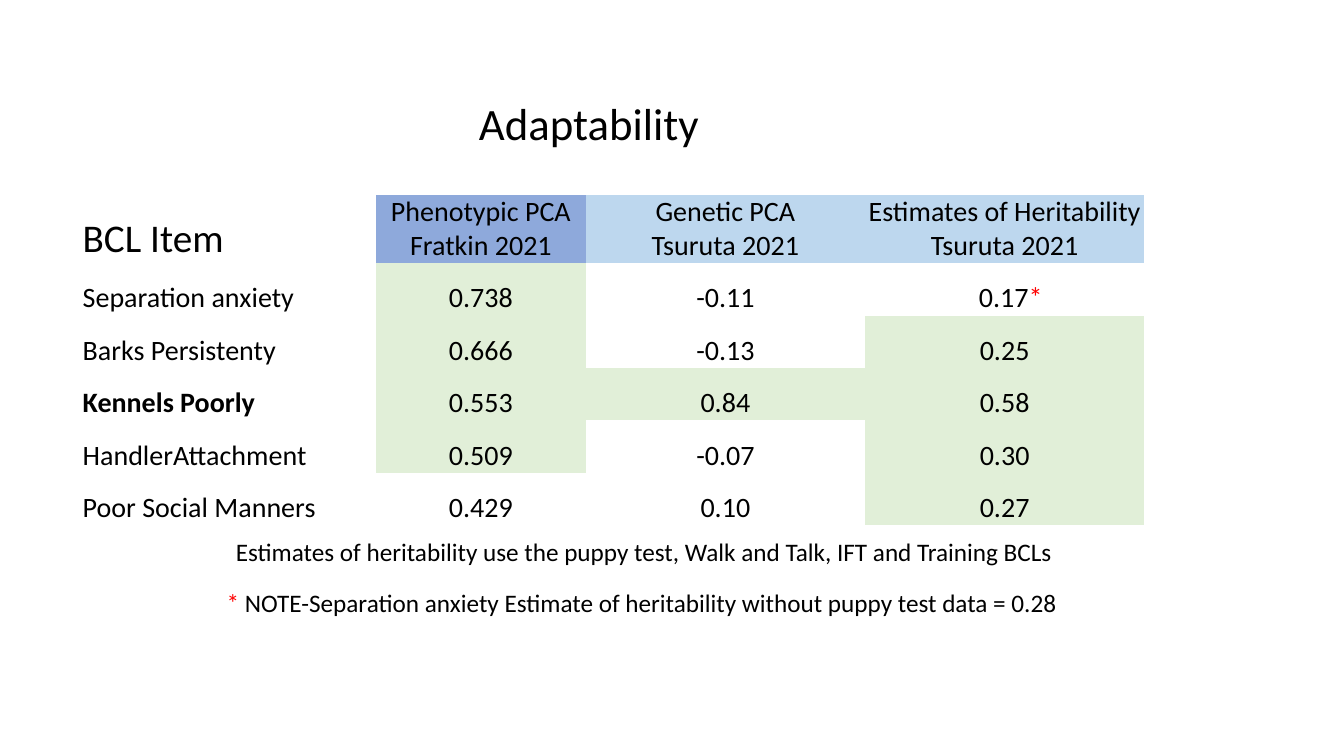
from dataclasses import dataclass

from pptx import Presentation
from pptx.dml.color import RGBColor
from pptx.enum.text import MSO_ANCHOR, PP_ALIGN
from pptx.util import Pt

LEFT, CENTER = PP_ALIGN.LEFT, PP_ALIGN.CENTER
TOP, BOTTOM = MSO_ANCHOR.TOP, MSO_ANCHOR.BOTTOM
PX = 9144  # 100 px to the inch
TITLE_ONLY = 5
NO_STYLE_NO_GRID = "{2D5ABB26-0587-4C30-8999-92F81FD0307C}"


@dataclass(frozen=True)
class Theme:
    font: str = "Calibri"
    text: str = "000000"
    alert: str = "FF0000"
    phenotypic: str = "8EA9DB"
    genetic: str = "BDD7EE"
    strong: str = "E1EFD8"
    title: int = 32
    label: int = 28
    cell: int = 20
    note: int = 18


THEME = Theme()

COL_WIDTHS = [291, 208, 277, 277]
HEADER_HEIGHT, ROW_HEIGHT = 68, 52
HEADERS = [
    ("Phenotypic PCA\nFratkin 2021", THEME.phenotypic),
    ("Genetic PCA\nTsuruta 2021", THEME.genetic),
    ("Estimates of Heritability\nTsuruta 2021", THEME.genetic),
]
ITEMS = [
    ("Separation anxiety", "0.738", "-0.11", "0.17*"),
    ("Barks Persistenty", "0.666", "-0.13", "0.25"),
    ("Kennels Poorly", "0.553", "0.84", "0.58"),
    ("HandlerAttachment", "0.509", "-0.07", "0.30"),
    ("Poor Social Manners", "0.429", "0.10", "0.27"),
]
KEY_ITEM = "Kennels Poorly"
STRONG_FROM = [0.5, 0.5, 0.25]  # lowest shaded value in each value column
STAR_OFFSET = 12


def px(n):
    return n * PX


def write(tf, text, size, bold=False, align=LEFT, spacing=None):
    """Fill a text frame, one paragraph a line, with asterisks in the alert colour."""
    for i, line in enumerate(text.split("\n")):
        p = tf.add_paragraph() if i else tf.paragraphs[0]
        p.alignment = align
        if spacing:
            p.line_spacing = spacing
        before, star, after = line.partition("*")
        for part in filter(None, (before, star, after)):
            r = p.add_run()
            r.text = part
            r.font.name = THEME.font
            r.font.size = Pt(size)
            r.font.bold = bold
            color = THEME.alert if part == "*" else THEME.text
            r.font.color.rgb = RGBColor.from_string(color)


def add_title(s, text, x, y, w, h):
    sp = s.shapes.title
    sp.left, sp.top, sp.width, sp.height = map(px, (x, y, w, h))
    sp.text_frame.word_wrap = False
    sp.text_frame.vertical_anchor = TOP
    write(sp.text_frame, text, THEME.title)


def add_note(s, text, x, y, w, h):
    sp = s.shapes.add_textbox(*map(px, (x, y, w, h)))
    sp.text_frame.word_wrap = True
    write(sp.text_frame, text, THEME.note)


def fill_cell(cell, text, fill=None, size=THEME.cell, **fmt):
    cell.margin_left = px(STAR_OFFSET) if text.endswith("*") else 0
    cell.margin_right = cell.margin_top = cell.margin_bottom = 0
    cell.vertical_anchor = BOTTOM
    if fill:
        cell.fill.solid()
        cell.fill.fore_color.rgb = RGBColor.from_string(fill)
    else:
        cell.fill.background()
    write(cell.text_frame, text, size, **fmt)


def add_plain_table(s, x, y, widths, heights):
    frame = s.shapes.add_table(len(heights), len(widths), px(x), px(y),
                               px(sum(widths)), px(sum(heights)))
    table = frame.table
    table.first_row = table.horz_banding = False
    table._tbl.tblPr[0].text = NO_STYLE_NO_GRID
    for col, w in zip(table.columns, widths):
        col.width = px(w)
    for row, h in zip(table.rows, heights):
        row.height = px(h)
    return table


def add_adaptability_table(s, x, y):
    heights = [HEADER_HEIGHT] + [ROW_HEIGHT] * len(ITEMS)
    table = add_plain_table(s, x, y, COL_WIDTHS, heights)
    fill_cell(table.cell(0, 0), "BCL Item", size=THEME.label)
    for c, (header, fill) in enumerate(HEADERS, 1):
        fill_cell(table.cell(0, c), header, fill, align=CENTER)
    for r, (item, *values) in enumerate(ITEMS, 1):
        fill_cell(table.cell(r, 0), item, bold=item == KEY_ITEM, spacing=1.5)
        for c, (value, limit) in enumerate(zip(values, STRONG_FROM), 1):
            strong = float(value.rstrip("*")) >= limit
            fill_cell(table.cell(r, c), value, THEME.strong if strong else None,
                      align=CENTER, spacing=1.5)


def main():
    prs = Presentation()
    prs.slide_width, prs.slide_height = px(1333), px(750)
    s = prs.slides.add_slide(prs.slide_layouts[TITLE_ONLY])
    add_adaptability_table(s, 82, 193)
    add_title(s, "Adaptability", 465, 90, 241, 64)
    add_note(s, "Estimates of heritability use the puppy test, Walk and Talk, "
                "IFT and Training BCLs", 224, 527, 839, 40)
    add_note(s, "* NOTE-Separation anxiety Estimate of heritability without "
                "puppy test data = 0.28", 215, 578, 848, 40)
    prs.save("out.pptx")


if __name__ == "__main__":
    main()
